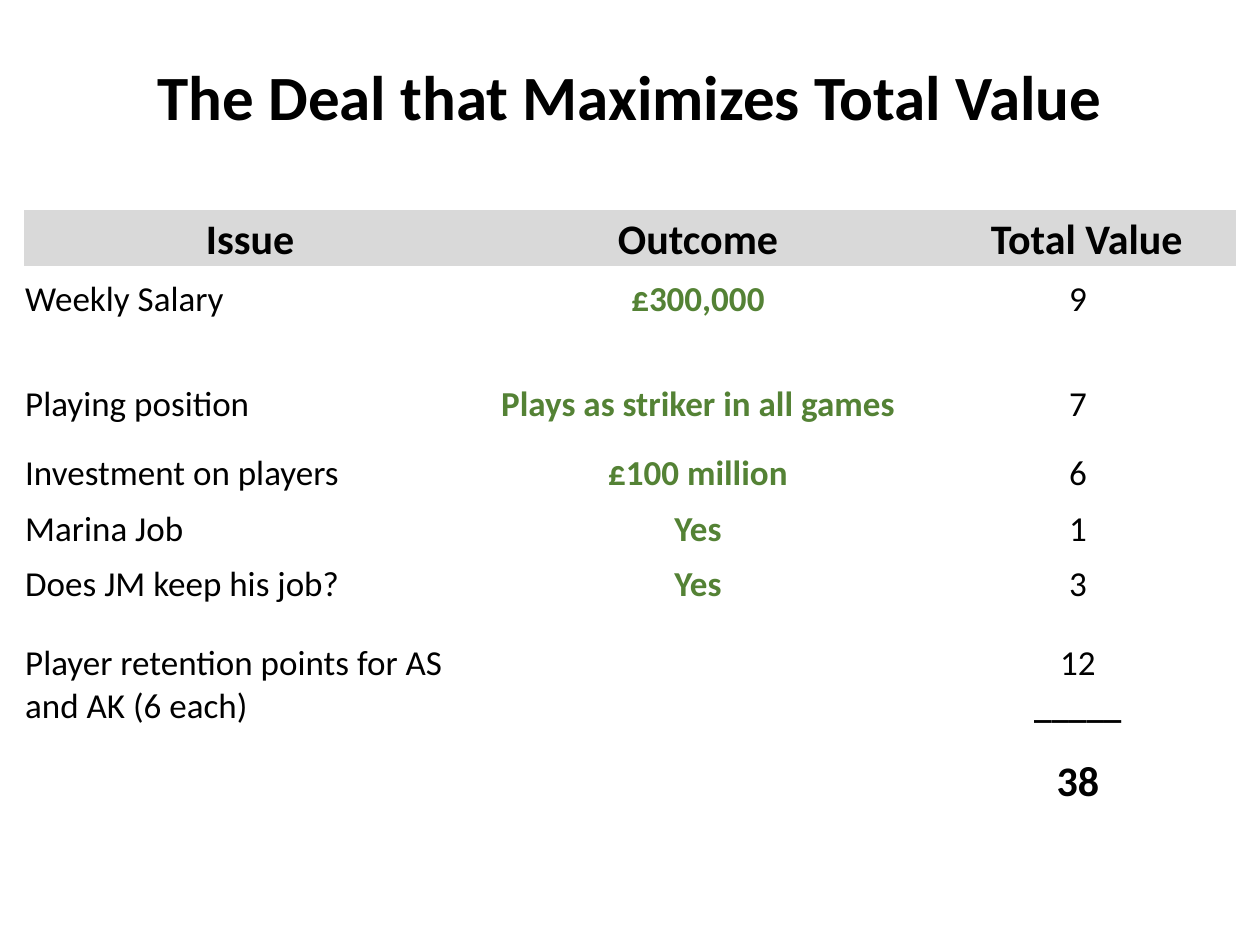
from pptx import Presentation
from pptx.dml.color import RGBColor
from pptx.enum.text import MSO_ANCHOR, PP_ALIGN
from pptx.oxml.ns import qn
from pptx.util import Inches, Pt

BLACK = RGBColor(0x00, 0x00, 0x00)
GREEN = RGBColor(0x54, 0x82, 0x35)
GRAY = RGBColor(0xD9, 0xD9, 0xD9)
LEFT, CENTER = PP_ALIGN.LEFT, PP_ALIGN.CENTER
BOTTOM, MIDDLE = MSO_ANCHOR.BOTTOM, MSO_ANCHOR.MIDDLE
PLAIN_STYLE = "{2D5ABB26-0587-4C30-8999-92F81FD0307C}"  # no style, no grid

HEAD = {"size": Pt(24), "bold": True, "color": BLACK}
BODY = {"size": Pt(20), "bold": False, "color": BLACK}
DEAL = {"size": Pt(20), "bold": True, "color": GREEN}
RULE = {"size": Pt(20), "bold": True, "color": BLACK}

WIDTHS = [3.59, 3.52, 2.51]
ROWS = [
    (0.44, "Issue", "Outcome", "Total Value"),
    (0.44, "Weekly Salary", "£300,000", "9"),
    (0.83, "Playing position", "Plays as striker in all games", "7"),
    (0.55, "Investment on players", "£100 million", "6"),
    (0.44, "Marina Job", "Yes", "1"),
    (0.44, "Does JM keep his job?", "Yes", "3"),
    (0.97, "Player retention points for AS and AK (6 each)", "", "12\n_____"),
    (0.63, "", "", "38"),
]
LAST = len(ROWS) - 1


def write(frame, text, look, align):
    """Fill a text frame, one paragraph a line, in the given look."""
    frame.text = text
    for para in frame.paragraphs:
        para.alignment = align
        for run in para.runs:
            font = run.font
            font.name = "Calibri"
            for key, value in look.items():
                if key == "color":
                    font.color.rgb = value
                else:
                    setattr(font, key, value)


deck = Presentation()
deck.slide_width, deck.slide_height = Inches(10), Inches(7.5)
slide = deck.slides.add_slide(deck.slide_layouts[5])

# Table of issues
shape = slide.shapes.add_table(
    len(ROWS), len(WIDTHS), Inches(0.19), Inches(1.67),
    Inches(sum(WIDTHS)), Inches(sum(row[0] for row in ROWS)))
table = shape.table
table.first_row = table.horz_banding = False
for style in shape._element.iter(qn("a:tableStyleId")):
    style.text = PLAIN_STYLE
for column, width in zip(table.columns, WIDTHS):
    column.width = Inches(width)

for r, (height, *texts) in enumerate(ROWS):
    table.rows[r].height = Inches(height)
    for c, text in enumerate(texts):
        cell = table.cell(r, c)
        cell.vertical_anchor = BOTTOM
        cell.margin_left = cell.margin_right = cell.margin_top = Inches(0.01)
        cell.margin_bottom = 0
        if r == 0:
            cell.fill.solid()
            cell.fill.fore_color.rgb = GRAY
        else:
            cell.fill.background()
        look = HEAD if r in (0, LAST) else (BODY, DEAL, BODY)[c]
        align = LEFT if c == 0 and r > 0 else CENTER
        write(cell.text_frame, text, look, align)

table.cell(0, 2).margin_left = Inches(0.15)
line = table.cell(LAST - 1, 2).text_frame.paragraphs[1].runs[0]
line.font.bold = RULE["bold"]

# Title
title = slide.shapes.title
title.left, title.top = Inches(0.5), Inches(0.13)
title.width, title.height = Inches(9), Inches(1.25)
title.text_frame.vertical_anchor = MIDDLE
write(title.text_frame, "The Deal that Maximizes Total Value",
      {**HEAD, "size": Pt(36)}, CENTER)

deck.save("out.pptx")
